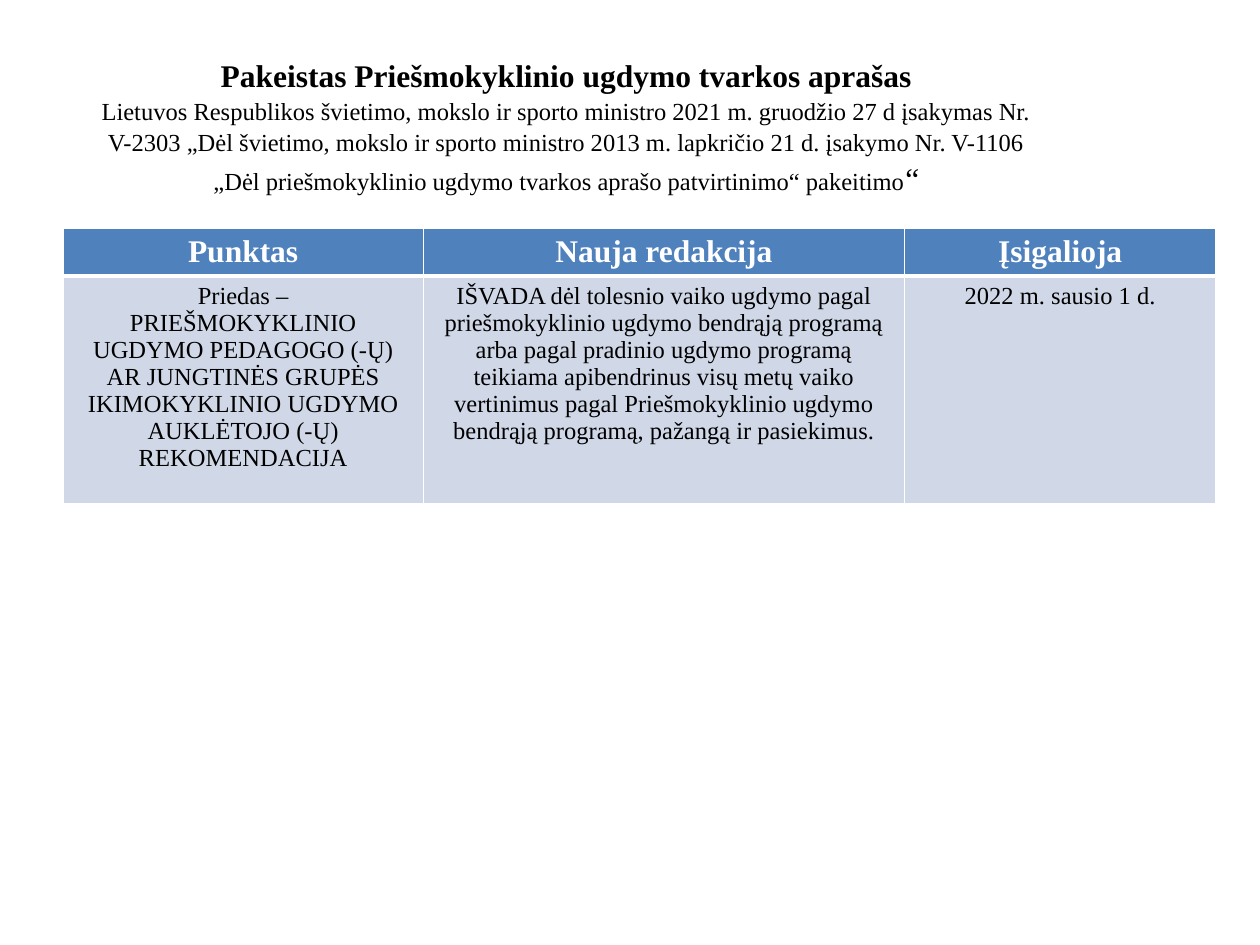
from dataclasses import dataclass

from lxml import etree
from pptx import Presentation
from pptx.dml.color import RGBColor
from pptx.enum.text import MSO_ANCHOR, MSO_AUTO_SIZE, PP_ALIGN
from pptx.oxml.ns import qn
from pptx.util import Inches, Pt

CENTER = PP_ALIGN.CENTER
MIDDLE = MSO_ANCHOR.MIDDLE
FIXED = MSO_AUTO_SIZE.NONE


@dataclass
class Theme:
    font: str = "Times New Roman"
    big: int = 18
    small: int = 14
    ink: str = "000000"
    white: str = "FFFFFF"
    head: str = "4F81BD"
    body: str = "D0D8E8"


theme = Theme()


def write(para, text, size=theme.small, color=theme.ink, bold=False):
    para.alignment = CENTER
    run = para.add_run()
    run.text = text
    font = run.font
    font.name, font.size, font.bold = theme.font, Pt(size), bold
    font.color.rgb = RGBColor.from_string(color)


def edge(cell, **widths):
    """Draw white borders; widths are points, keyed by side in the order L, R, T, B."""
    props = cell._tc.get_or_add_tcPr()
    for spot, (side, width) in enumerate(widths.items()):
        line = etree.Element(qn(f"a:ln{side}"), w=str(Pt(width)))
        fill = etree.SubElement(line, qn("a:solidFill"))
        etree.SubElement(fill, qn("a:srgbClr"), val=theme.white)
        props.insert(spot, line)


deck = Presentation()
deck.slide_width, deck.slide_height = Inches(10), Inches(7.5)
slide = deck.slides.add_slide(deck.slide_layouts[5])

# Title
title = slide.shapes.title
title.left, title.top = Inches(0.59), Inches(0.36)
title.width, title.height = Inches(7.81), Inches(1.57)
frame = title.text_frame
frame.word_wrap, frame.auto_size = True, FIXED
frame.vertical_anchor = MIDDLE
frame.margin_bottom = Inches(0.35)
para = frame.paragraphs[0]
para.line_spacing, para.space_after = 1.07, Pt(8)
write(para, "Pakeistas Priešmokyklinio ugdymo tvarkos aprašas", size=theme.big, bold=True)
para.add_line_break()
write(para, "Lietuvos Respublikos švietimo, mokslo ir sporto ministro 2021 m. gruodžio 27 d "
            "įsakymas Nr. V-2303 „Dėl švietimo, mokslo ir sporto ministro 2013 m. lapkričio "
            "21 d. įsakymo Nr. V-1106 „Dėl priešmokyklinio ugdymo tvarkos aprašo "
            "patvirtinimo“ pakeitimo")
write(para, "“", size=theme.big)

# Table: each cell holds a list of paragraphs
rows = [
    [["Punktas"], ["Nauja redakcija"], ["Įsigalioja"]],
    [
        ["Priedas –",
         "PRIEŠMOKYKLINIO UGDYMO PEDAGOGO (-Ų) AR JUNGTINĖS GRUPĖS "
         "IKIMOKYKLINIO UGDYMO AUKLĖTOJO (-Ų) REKOMENDACIJA"],
        ["IŠVADA dėl tolesnio vaiko ugdymo pagal priešmokyklinio ugdymo bendrąją programą "
         "arba pagal pradinio ugdymo programą teikiama apibendrinus visų metų vaiko "
         "vertinimus pagal Priešmokyklinio ugdymo bendrąją programą, pažangą ir pasiekimus."],
        ["2022 m. sausio 1 d."],
    ],
]
widths, heights = [2.86, 3.82, 2.47], [0.38, 1.81]
table = slide.shapes.add_table(
    len(heights), len(widths), Inches(0.5), Inches(1.81),
    Inches(sum(widths)), Inches(sum(heights))).table
for col, width in zip(table.columns, widths):
    col.width = Inches(width)
for row, height in zip(table.rows, heights):
    row.height = Inches(height)

looks = [
    dict(size=theme.big, color=theme.white, bold=True),
    dict(size=theme.small, color=theme.ink, bold=False),
]
fills = [theme.head, theme.body]
edges = [dict(L=1, R=1, T=1, B=3), dict(L=1, R=1, T=3, B=1)]
for r, row in enumerate(rows):
    for c, texts in enumerate(row):
        cell = table.cell(r, c)
        cell.fill.solid()
        cell.fill.fore_color.rgb = RGBColor.from_string(fills[r])
        edge(cell, **edges[r])
        for i, text in enumerate(texts):
            para = cell.text_frame.add_paragraph() if i else cell.text_frame.paragraphs[0]
            write(para, text, **looks[r])

deck.save("out.pptx")
